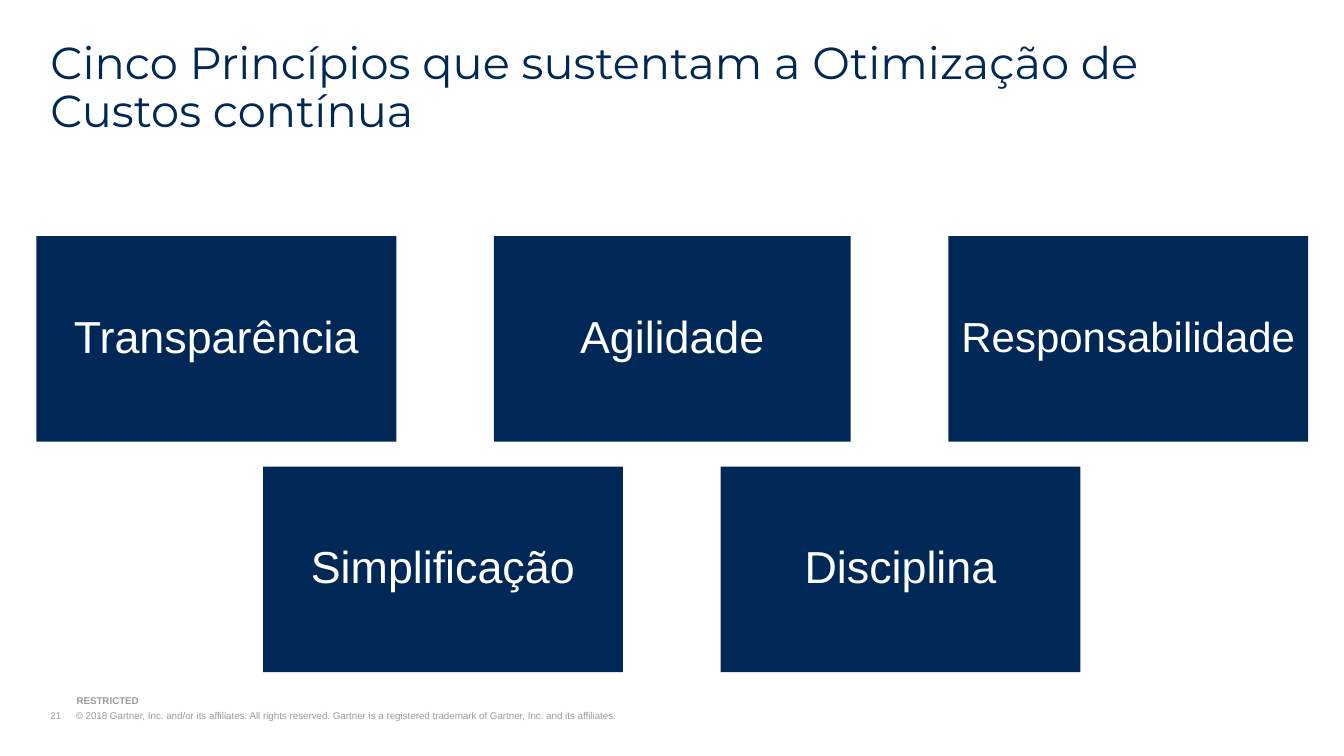
from lxml.etree import SubElement
from pptx import Presentation
from pptx.dml.color import RGBColor
from pptx.enum.shapes import MSO_SHAPE
from pptx.enum.text import MSO_ANCHOR, PP_ALIGN
from pptx.oxml.ns import qn
from pptx.util import Cm, Pt


def color(value):
    return RGBColor.from_string(value)


def set_attributes(target, values):
    for name, value in values.items():
        setattr(target, name, value)


class SlideBuilder:
    navy = "002856"
    white = "FFFFFF"
    gray = "979D9D"

    def __init__(self, presentation):
        self.slide = presentation.slides.add_slide(presentation.slide_layouts[6])

    def fill_text(self, shape, text, font, text_color, anchor, margin=0, layout=None):
        frame = shape.text_frame
        set_attributes(frame, {
            "word_wrap": True, "vertical_anchor": anchor,
            "margin_left": Cm(margin), "margin_right": Cm(margin),
            "margin_top": Cm(margin), "margin_bottom": Cm(margin),
        })
        paragraph = frame.paragraphs[0]
        set_attributes(paragraph, layout or {})
        run = paragraph.add_run()
        run.text = text
        set_attributes(run.font, font)
        run.font.color.rgb = color(text_color)
        return paragraph

    def text_box(self, left, top, width, height):
        return self.slide.shapes.add_textbox(Cm(left), Cm(top), Cm(width), Cm(height))

    def title(self, text):
        shape = self.text_box(1.27, 1.02, 31.32, 1.22)
        self.fill_text(shape, text, {"name": "Montserrat", "size": Pt(32)}, self.navy,
                       MSO_ANCHOR.TOP, layout={"line_spacing": 0.9})

    def footer(self, text, left, top, width, bold=False):
        shape = self.text_box(left, top, width, 0.3)
        paragraph = self.fill_text(shape, text, {"name": "Arial", "size": Pt(7), "bold": bold},
                                   self.gray, MSO_ANCHOR.BOTTOM)
        indent = Cm(0.64)
        properties = paragraph._p.get_or_add_pPr()
        properties.set("marL", str(indent))
        properties.set("indent", str(-indent))
        tabs = SubElement(properties, qn("a:tabLst"))
        SubElement(tabs, qn("a:tab"), pos=str(indent), algn="l")

    def principle(self, text, left, top, width, size):
        shape = self.slide.shapes.add_shape(
            MSO_SHAPE.RECTANGLE, Cm(left), Cm(top), Cm(width), Cm(5.18))
        shape.shadow.inherit = False
        shape.fill.solid()
        shape.fill.fore_color.rgb = color(self.navy)
        shape.line.fill.background()
        self.fill_text(shape, text, {"name": "Arial", "size": Pt(size)}, self.white,
                       MSO_ANCHOR.MIDDLE, 0.28,
                       {"alignment": PP_ALIGN.CENTER, "line_spacing": 0.9})

    def principle_row(self, left, top, principles, gap=2.46):
        for text, width, size in principles:
            self.principle(text, left, top, width, size)
            left += width + gap


def main():
    presentation = Presentation()
    set_attributes(presentation, {"slide_width": Cm(33.87), "slide_height": Cm(19.05)})
    builder = SlideBuilder(presentation)
    builder.footer(
        "21\t© 2018 Gartner, Inc. and/or its affiliates. All rights reserved. "
        "Gartner is a registered trademark of Gartner, Inc. and its affiliates.",
        1.27, 17.88, 20.29)
    builder.footer("RESTRICTED", 1.93, 17.5, 6.43, bold=True)
    builder.title("Cinco Princípios que sustentam a Otimização de Custos contínua")
    builder.principle_row(0.92, 5.95, [
        ("Transparência", 9.07, 32),
        ("Agilidade", 8.99, 32),
        ("Responsabilidade", 9.07, 30),
    ])
    builder.principle_row(6.63, 11.76, [
        ("Simplificação", 9.07, 32),
        ("Disciplina", 9.07, 32),
    ])
    presentation.save("out.pptx")


if __name__ == "__main__":
    main()
